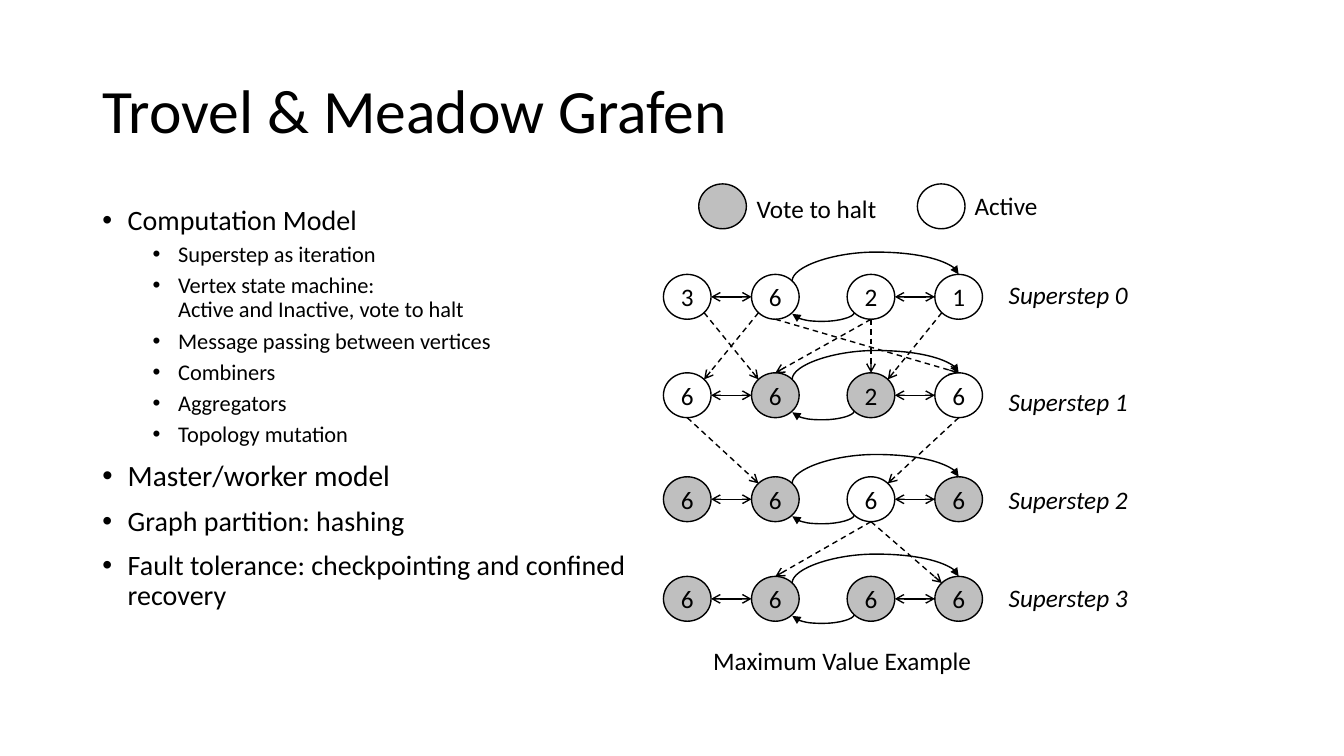
import math
from dataclasses import dataclass

import lxml.etree
import pptx
import pptx.dml.color
import pptx.enum.dml
import pptx.enum.shapes
import pptx.enum.text
import pptx.oxml.ns
import pptx.util

Cm = pptx.util.Cm
Align = pptx.enum.text.PP_ALIGN
Anchor = pptx.enum.text.MSO_ANCHOR
Connector = pptx.enum.shapes.MSO_CONNECTOR
qn = pptx.oxml.ns.qn


@dataclass(frozen=True)
class Theme:
    font: str = "Calibri"
    ink: str = "000000"
    active: str = "FFFFFF"
    halted: str = "BFBFBF"
    title: float = 44
    topic: float = 20
    large_topic: float = 21
    detail: float = 16
    label: float = 18
    line: float = 1


@dataclass(frozen=True)
class Bullet:
    text: str
    size: float
    indent: float = 0.64
    space: float = 10


@dataclass(frozen=True)
class Label:
    text: str
    left: float
    top: float
    width: float
    italic: bool = False
    align: Align = Align.LEFT


@dataclass(frozen=True)
class Superstep:
    center_y: float
    label_top: float
    values: str
    halted: tuple[int, ...]


@dataclass(frozen=True)
class Message:
    step: int
    sender: int
    sender_angle: int
    receiver: int
    receiver_angle: int


THEME = Theme()
NODE_WIDTH, NODE_HEIGHT = 1.2, 1.13
COLUMNS = (17.32, 19.54, 21.95, 24.16)
# Node angles run clockwise from the right
RIGHT, LOWER_RIGHT, BOTTOM, LOWER_LEFT, LEFT, UPPER_LEFT, TOP, UPPER_RIGHT = range(0, 360, 45)

BULLETS = (
    Bullet("Computation Model", THEME.topic),
    *(Bullet(text, THEME.detail, 1.91, 5) for text in (
        "Superstep as iteration",
        "Vertex state machine: \nActive and Inactive, vote to halt",
        "Message passing between vertices",
        "Combiners",
        "Aggregators",
        "Topology mutation",
    )),
    Bullet("Master/worker model", THEME.large_topic),
    Bullet("Graph partition: hashing", THEME.topic),
    Bullet("Fault tolerance: checkpointing and confined recovery", THEME.topic),
)
SUPERSTEPS = (
    Superstep(7.48, 6.91, "3621", ()),
    Superstep(9.96, 9.6, "6626", (1, 2)),
    Superstep(12.58, 12.09, "6666", (0, 1, 3)),
    Superstep(15.09, 14.56, "6666", (0, 1, 2, 3)),
)
MESSAGES = (
    Message(0, 0, LOWER_RIGHT, 1, UPPER_LEFT),
    Message(0, 1, LOWER_LEFT, 0, UPPER_RIGHT),
    Message(0, 2, BOTTOM, 1, TOP),
    Message(0, 1, BOTTOM, 3, TOP),
    Message(0, 3, LOWER_LEFT, 2, UPPER_RIGHT),
    Message(0, 2, BOTTOM, 2, TOP),
    Message(1, 0, BOTTOM, 1, UPPER_LEFT),
    Message(1, 3, BOTTOM, 2, UPPER_RIGHT),
    Message(2, 2, BOTTOM, 1, TOP),
    Message(2, 2, BOTTOM, 3, UPPER_LEFT),
)
LABELS = (
    *(Label(f"Superstep {number}", 25.17, step.label_top, 3.63, italic=True)
      for number, step in enumerate(SUPERSTEPS)),
    Label("Vote to halt", 18.82, 4.75, 3.73),
    Label("Active", 24.31, 4.66, 2.51),
    Label("Maximum Value Example", 16.74, 16.13, 8.97, align=Align.CENTER),
)


def rgb(value: str):
    return pptx.dml.color.RGBColor.from_string(value)


def write_text(paragraph, text: str, *, size: float, italic: bool = False,
               align: Align = Align.LEFT, spacing: float = 1.0) -> None:
    paragraph.text = text
    paragraph.alignment = align
    paragraph.line_spacing = spacing
    for run in paragraph.runs:
        run.font.name = THEME.font
        run.font.size = pptx.util.Pt(size)
        run.font.italic = italic
        run.font.color.rgb = rgb(THEME.ink)


def add_frame(slide, left: float, top: float, width: float, height: float):
    frame = slide.shapes.add_textbox(Cm(left), Cm(top), Cm(width), Cm(height)).text_frame
    frame.word_wrap = True
    return frame


def add_bullet(paragraph, bullet: Bullet) -> None:
    write_text(paragraph, bullet.text, size=bullet.size, spacing=0.9)
    paragraph.space_before = pptx.util.Pt(bullet.space)
    properties = paragraph._p.get_or_add_pPr()
    properties.set("marL", str(Cm(bullet.indent)))
    properties.set("indent", str(-Cm(0.64)))
    lxml.etree.SubElement(properties, qn("a:buFont"), typeface="Arial")
    lxml.etree.SubElement(properties, qn("a:buChar"), char="•")


def add_node(slide, center_x: float, center_y: float, halted: bool, value: str = "") -> None:
    shape = slide.shapes.add_shape(
        pptx.enum.shapes.MSO_SHAPE.OVAL, Cm(center_x - NODE_WIDTH / 2),
        Cm(center_y - NODE_HEIGHT / 2), Cm(NODE_WIDTH), Cm(NODE_HEIGHT))
    shape.shadow.inherit = False
    shape.fill.solid()
    shape.fill.fore_color.rgb = rgb(THEME.halted if halted else THEME.active)
    shape.line.color.rgb = rgb(THEME.ink)
    shape.line.width = pptx.util.Pt(THEME.line)
    frame = shape.text_frame
    frame.margin_left = frame.margin_right = 0
    frame.vertical_anchor = Anchor.MIDDLE
    if value:
        write_text(frame.paragraphs[0], value, size=THEME.label, align=Align.CENTER)


def node_edge(step: int, column: int, angle: int) -> tuple[float, float]:
    radians = math.radians(angle)
    return (COLUMNS[column] + NODE_WIDTH / 2 * math.cos(radians),
            SUPERSTEPS[step].center_y + NODE_HEIGHT / 2 * math.sin(radians))


def add_link(slide, start: tuple[float, float], end: tuple[float, float], *,
             kind: Connector = Connector.STRAIGHT, arrow: str = "arrow",
             both: bool = False, dashed: bool = False):
    link = slide.shapes.add_connector(kind, *(Cm(value) for value in (*start, *end)))
    link.line.color.rgb = rgb(THEME.ink)
    link.line.width = pptx.util.Pt(THEME.line)
    if dashed:
        link.line.dash_style = pptx.enum.dml.MSO_LINE.DASH
    line = link.line._get_or_add_ln()
    for tag in ("a:headEnd", "a:tailEnd") if both else ("a:tailEnd",):
        lxml.etree.SubElement(line, qn(tag), type=arrow)
    lxml.etree.SubElement(link._element.spPr, qn("a:effectLst"))
    return link


def add_curve(slide, start: tuple[float, float], end: tuple[float, float], bulge: float) -> None:
    """Draw a quarter-turned curve that leaves and arrives vertically."""
    link = add_link(slide, start, end, kind=Connector.CURVE, arrow="triangle")
    width, height = abs(end[1] - start[1]), abs(end[0] - start[0])
    link.left = Cm((start[0] + end[0] - width) / 2)
    link.top = Cm((start[1] + end[1] - height) / 2)
    link.width, link.height = Cm(width), Cm(height)
    transform = link._element.spPr.find(qn("a:xfrm"))
    flip = "1" if end[0] > start[0] else "0"
    for name, value in (("rot", "5400000"), ("flipH", flip), ("flipV", flip)):
        transform.set(name, value)
    adjustments = link._element.spPr.find(qn("a:prstGeom")).find(qn("a:avLst"))
    lxml.etree.SubElement(adjustments, qn("a:gd"), name="adj1",
                          fmla=f"val {round(bulge / width * 100000)}")


def main() -> None:
    presentation = pptx.Presentation()
    presentation.slide_width, presentation.slide_height = Cm(33.87), Cm(19.05)
    slide = presentation.slides.add_slide(presentation.slide_layouts[6])

    # Title and bullets
    title = add_frame(slide, 2.33, 1.01, 29.21, 3.68)
    title.vertical_anchor = Anchor.MIDDLE
    write_text(title.paragraphs[0], "Trovel & Meadow Grafen", size=THEME.title, spacing=0.9)
    body = add_frame(slide, 2.33, 5.07, 14.4, 12.09)
    for index, bullet in enumerate(BULLETS):
        add_bullet(body.add_paragraph() if index else body.paragraphs[0], bullet)

    # Vertices and edges of each superstep
    for number, step in enumerate(SUPERSTEPS):
        for column, value in enumerate(step.values):
            add_node(slide, COLUMNS[column], step.center_y, column in step.halted, value)
        for column in (0, 2):
            add_link(slide, node_edge(number, column, RIGHT),
                     node_edge(number, column + 1, LEFT), both=True)
        end_x, end_y = node_edge(number, 1, LOWER_RIGHT)
        add_curve(slide, node_edge(number, 2, LOWER_LEFT), (end_x, end_y + 0.03), 0.22)
        add_curve(slide, node_edge(number, 1, UPPER_RIGHT), node_edge(number, 3, TOP), 0.73)

    # Messages between supersteps
    for message in MESSAGES:
        add_link(slide, node_edge(message.step, message.sender, message.sender_angle),
                 node_edge(message.step + 1, message.receiver, message.receiver_angle),
                 dashed=True)

    # Legend and labels
    for center_x, halted in ((18.21, True), (23.72, False)):
        add_node(slide, center_x, 5.2, halted)
    for label in LABELS:
        frame = add_frame(slide, label.left, label.top, label.width, 1.03)
        write_text(frame.paragraphs[0], label.text, size=THEME.label,
                   italic=label.italic, align=label.align)
    presentation.save("out.pptx")


if __name__ == "__main__":
    main()
